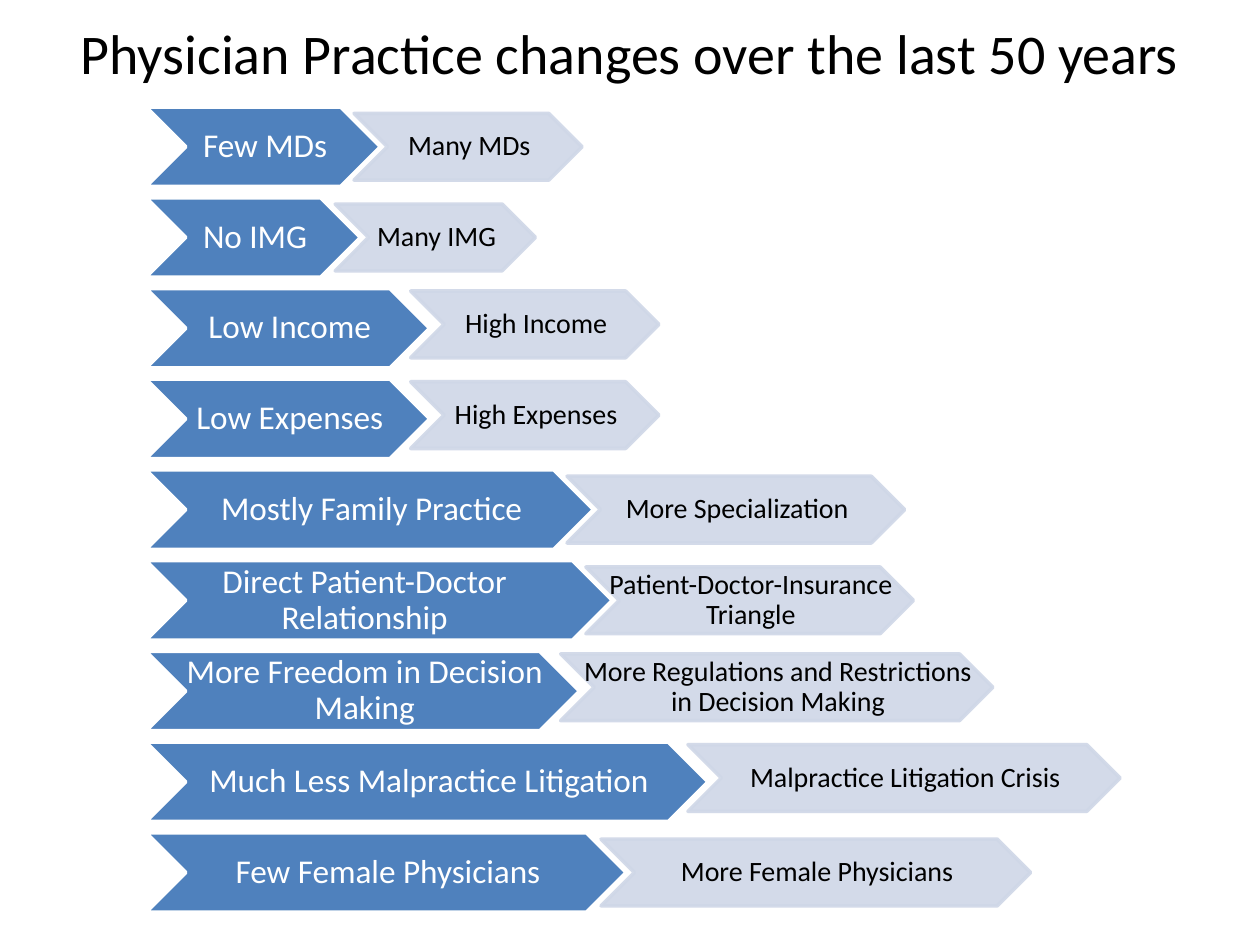
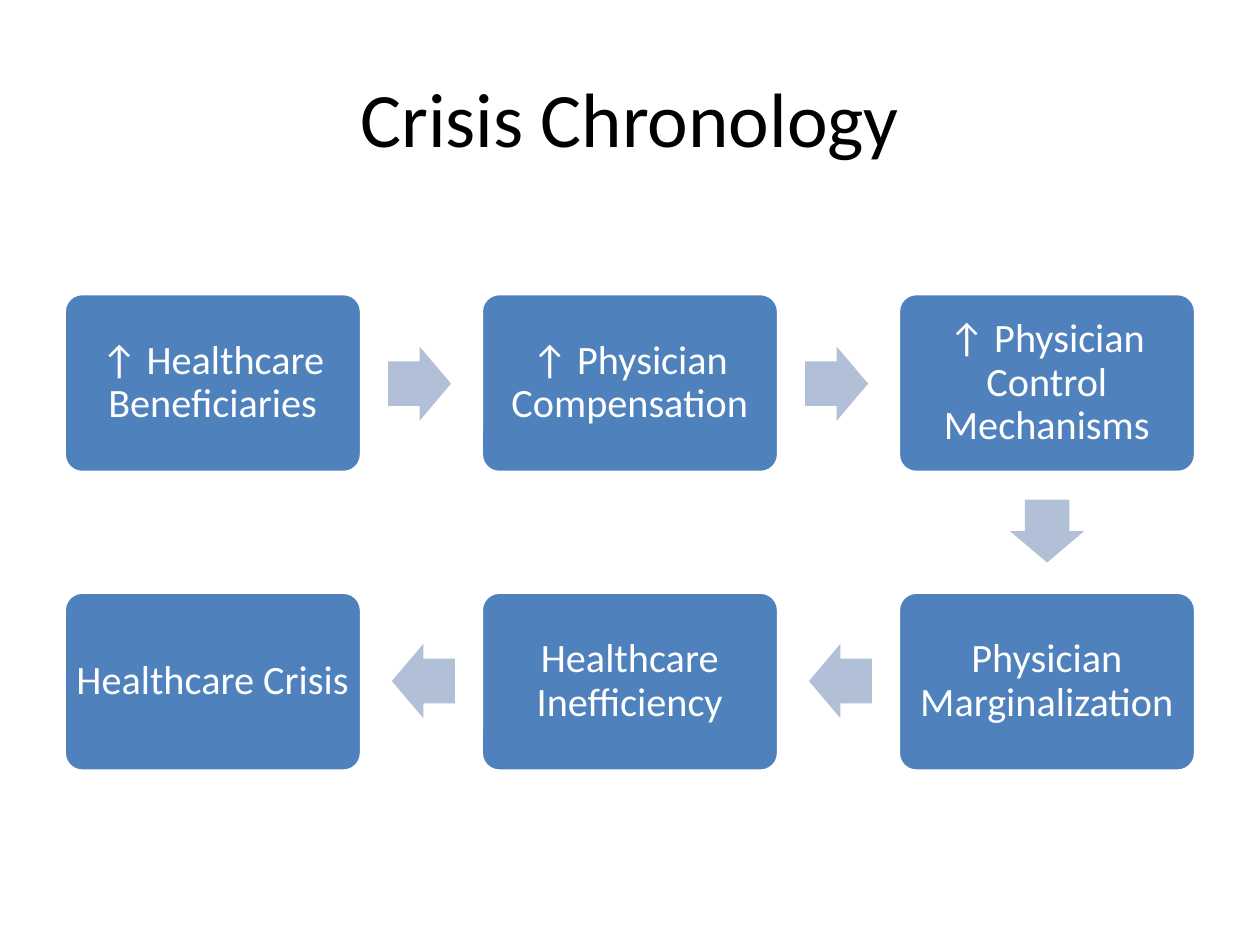
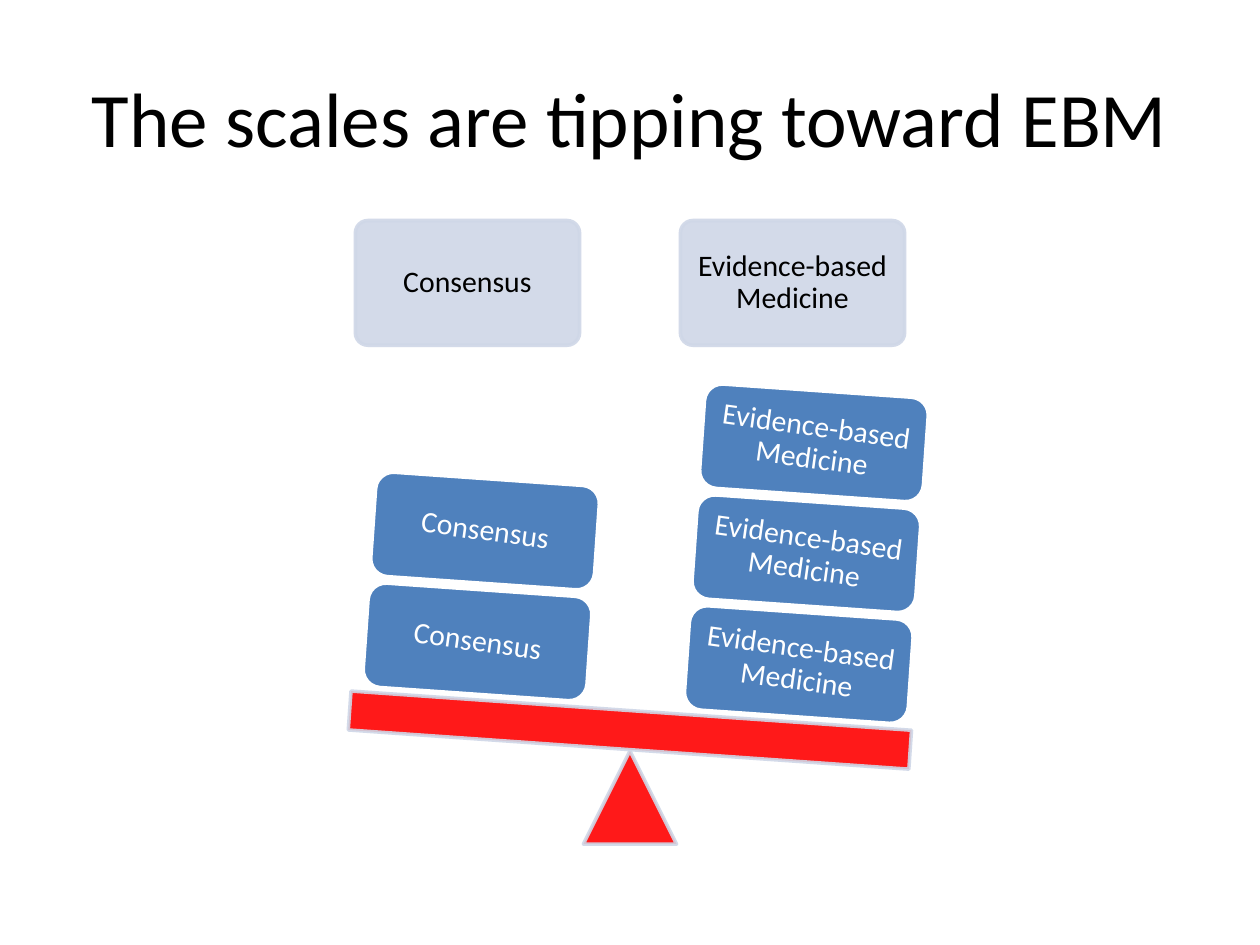
"""Build three slides on physician practice, the healthcare crisis and evidence-based medicine."""
from lxml.etree import SubElement
from pptx import Presentation
from pptx.dml.color import RGBColor
from pptx.enum.shapes import MSO_SHAPE
from pptx.enum.text import MSO_ANCHOR, PP_ALIGN
from pptx.oxml.ns import qn
from pptx.util import Inches, Pt

FONT = "Calibri"
COLOURS = {"strong": "4F81BD", "soft": "CFD7E7", "arrow": "B1C0D7",
           "scale": "FF0000", "white": "FFFFFF", "black": "000000"}
LINES = {"strong": "white", "soft": "soft", "scale": "soft"}
TRANSLUCENT = ("soft", "scale")


def add_block(slide, preset, box, role, adjustments=(), rotation=0):
    block = slide.shapes.add_shape(preset, *[Inches(length) for length in box])
    block.shadow.inherit = False
    block.rotation = rotation
    for index, value in enumerate(adjustments):
        block.adjustments[index] = value
    block.fill.solid()
    block.fill.fore_color.rgb = RGBColor.from_string(COLOURS[role])
    if role in LINES:
        block.line.width = Pt(2)
        block.line.color.rgb = RGBColor.from_string(COLOURS[LINES[role]])
    else:
        block.line.fill.background()
    if role in TRANSLUCENT:
        for colour in block.element.spPr.iter(qn("a:srgbClr")):
            SubElement(colour, qn("a:alpha"), val="90000")
    return block


def write(holder, text, size, colour, margins=(0.05, 0.05, 0.05, 0.05), wrap=True, spacing=0.9):
    frame = holder.text_frame
    frame.text = text
    frame.word_wrap = wrap
    frame.vertical_anchor = MSO_ANCHOR.MIDDLE
    frame.margin_left, frame.margin_top, frame.margin_right, frame.margin_bottom = [
        Inches(margin) for margin in margins]
    for paragraph in frame.paragraphs:
        paragraph.alignment = PP_ALIGN.CENTER
        paragraph.line_spacing = spacing
        for run in paragraph.runs:
            run.font.name = FONT
            run.font.size = Pt(size)
            run.font.color.rgb = RGBColor.from_string(COLOURS[colour])


deck = Presentation()
deck.slide_width, deck.slide_height = Inches(10), Inches(7.5)

headings = [
    ("Physician Practice changes over the last 50 years", 0, 0.83, 32),
    ("Crisis Chronology", 0.3, 1.25, 44),
    ("The scales are tipping toward EBM", 0.3, 1.25, 44),
]
slides = []
for heading, top, height, size in headings:
    slide = deck.slides.add_slide(deck.slide_layouts[5])
    title = slide.shapes.title
    title.left, title.top = Inches(0.5), Inches(top)
    title.width, title.height = Inches(9), Inches(height)
    write(title, heading, size, "black", (0.1, 0.05, 0.1, 0.05), spacing=1.0)
    slides.append(slide)
practice, chronology, scales = slides

changes = [
    ("Few MDs", 1.86, 0, "Many MDs", 2.81, 0.05, 1.81),
    ("No IMG", 1.7, 0, "Many IMG", 2.66, 0.05, 1.59),
    ("Low Income", 2.25, 0, "High Income", 3.26, 0.02, 1.97),
    ("Low Expenses", 2.25, 0, "High Expenses", 3.26, 0.02, 1.97),
    ("Mostly Family Practice", 3.55, 0, "More Specialization", 4.5, 0.05, 2.68),
    ("Direct Patient-Doctor\vRelationship", 3.7, 0.26,
     "Patient-Doctor-Insurance\vTriangle", 4.65, 0.05, 2.6),
    ("More Freedom in Decision\vMaking", 3.44, 0,
     "More Regulations and Restrictions\nin Decision Making", 4.45, 0.02, 3.43),
    ("Much Less Malpractice Litigation", 4.46, 0,
     "Malpractice Litigation Crisis", 5.46, 0.02, 3.43),
    ("Few Female Physicians", 3.81, 0, "More Female Physicians", 4.77, 0.05, 3.41),
]
for row, (before, before_width, before_margin, after, after_left, drop, after_width) in enumerate(changes):
    top = 0.85 + 0.72 * row
    past = add_block(practice, MSO_SHAPE.CHEVRON, (1.16, top, before_width, 0.63), "strong", (0.5,))
    write(past, before, 19, "white", (0.03, 0.01, before_margin, 0.01), wrap=False)
    present = add_block(practice, MSO_SHAPE.CHEVRON,
                        (after_left, top + drop, after_width, 0.53), "soft", (0.5,))
    write(present, after, 16, "black", (0.02, 0.01, 0, 0.01), wrap=False)

stages = [
    ("↑ Healthcare Beneficiaries", 0, 0),
    ("↑ Physician Compensation", 1, 0),
    ("↑ Physician Control Mechanisms", 2, 0),
    ("Physician Marginalization", 2, 1),
    ("Healthcare Inefficiency", 1, 1),
    ("Healthcare Crisis", 0, 1),
]
for label, column, row in stages:
    stage = add_block(chronology, MSO_SHAPE.ROUNDED_RECTANGLE,
                      (0.51 + 3.31 * column, 2.33 + 2.37 * row, 2.36, 1.42), "strong", (0.1,))
    write(stage, label, 23, "white")
steps = [(3.08, 2.75, 0), (6.39, 2.75, 0), (8.06, 3.92, 90), (6.42, 5.11, 180), (3.11, 5.11, 180)]
for left, top, direction in steps:
    add_block(chronology, MSO_SHAPE.RIGHT_ARROW, (left, top, 0.5, 0.59), "arrow", (0.6, 0.5), direction)

add_block(scales, MSO_SHAPE.ISOSCELES_TRIANGLE, (4.63, 5.96, 0.74, 0.74), "scale")
add_block(scales, MSO_SHAPE.RECTANGLE, (2.77, 5.64, 4.46, 0.31), "scale", rotation=4)
sides = [
    ("Consensus", 2.82, 2.9, 4.68, 2),
    ("Evidence-based Medicine", 5.4, 5.45, 4.86, 3),
]
for approach, header_left, stack_left, stack_top, count in sides:
    header = add_block(scales, MSO_SHAPE.ROUNDED_RECTANGLE,
                       (header_left, 1.75, 1.78, 0.99), "soft", (0.1,))
    write(header, approach, 17, "black")
    for level in range(count):
        box = (stack_left + 0.06 * level, stack_top - 0.88 * level, 1.78, 0.83)
        add_block(scales, MSO_SHAPE.ROUNDED_RECTANGLE, box, "strong", (0.17,), 4)
        weight_label = scales.shapes.add_textbox(*[Inches(length) for length in box])
        weight_label.rotation = 8
        write(weight_label, approach, 17, "white", (0.07, 0.07, 0.07, 0.07))

deck.save("out.pptx")
